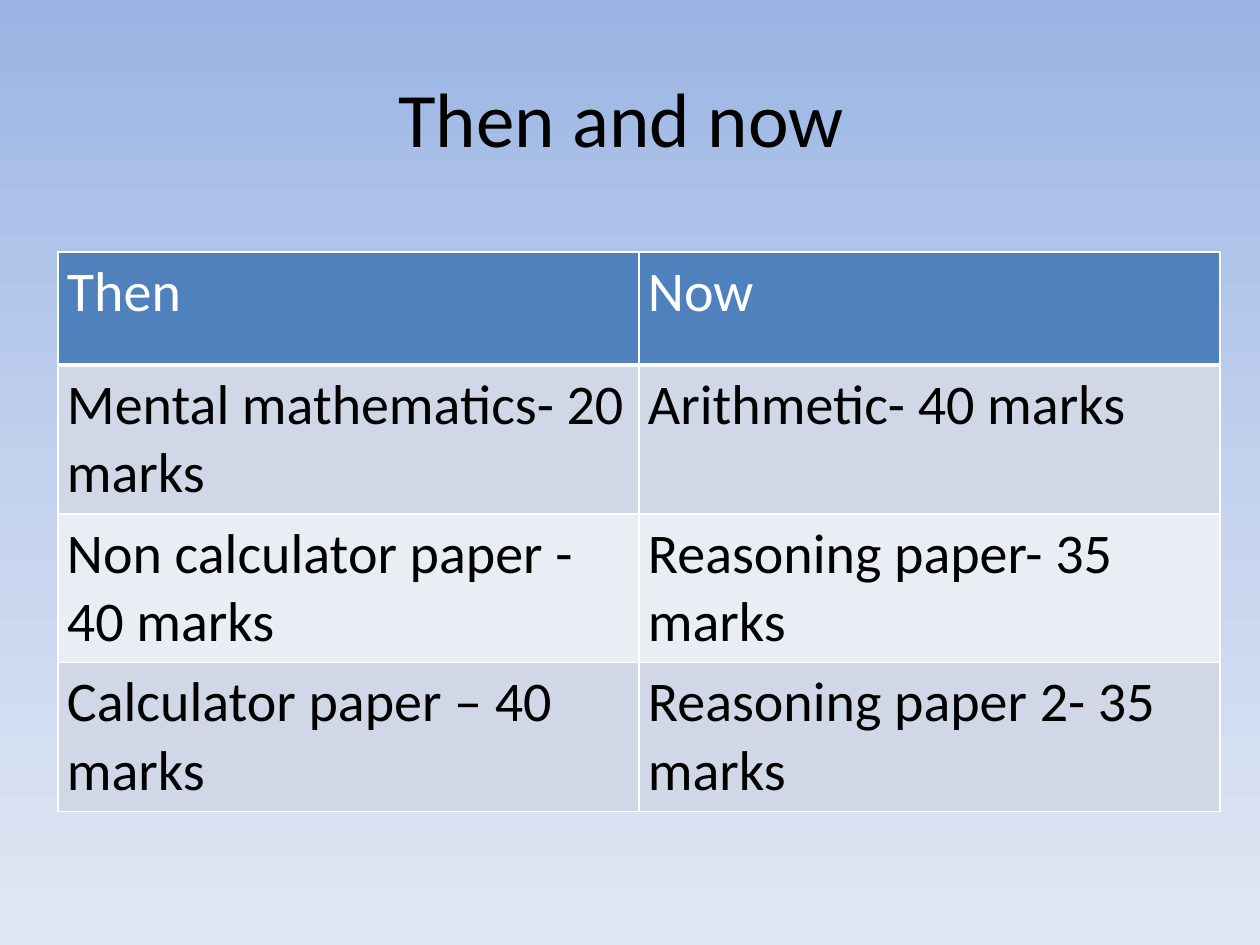
import copy

import pptx
import pptx.dml.color
import pptx.enum.text
import pptx.oxml
import pptx.oxml.ns
import pptx.util

EMU_PER_PX = 914400 / 126
FONT = "Calibri"

BLACK = pptx.dml.color.RGBColor(0x00, 0x00, 0x00)
WHITE = pptx.dml.color.RGBColor(0xFF, 0xFF, 0xFF)
HEADER_BLUE = pptx.dml.color.RGBColor(0x4F, 0x81, 0xBD)
BAND_DARK = pptx.dml.color.RGBColor(0xD0, 0xD8, 0xE8)
BAND_LIGHT = pptx.dml.color.RGBColor(0xE9, 0xED, 0xF4)
SKY_TOP = pptx.dml.color.RGBColor(0x9A, 0xB5, 0xE4)
SKY_MIDDLE = pptx.dml.color.RGBColor(0xC2, 0xD1, 0xED)
SKY_BOTTOM = pptx.dml.color.RGBColor(0xE1, 0xE8, 0xF5)

TABLE_ROWS = [
    ("Then", "Now"),
    ("Mental mathematics- 20 marks", "Arithmetic- 40 marks"),
    ("Non calculator paper - 40 marks", "Reasoning paper- 35 marks"),
    ("Calculator paper – 40 marks", "Reasoning paper 2- 35 marks"),
]


def px(length):
    return pptx.util.Emu(round(length * EMU_PER_PX))


def add_run(paragraph, text, size, color):
    run = paragraph.add_run()
    run.text = text
    run.font.name = FONT
    run.font.size = pptx.util.Pt(size)
    run.font.bold = False
    run.font.color.rgb = color


def set_background(slide):
    fill = slide.background.fill
    fill.gradient()
    fill.gradient_angle = 270
    stop_list = slide.element.find(".//" + pptx.oxml.ns.qn("a:gsLst"))
    stop_list.insert(1, copy.deepcopy(stop_list[0]))
    colors = (SKY_TOP, SKY_MIDDLE, SKY_BOTTOM)
    for stop, position, color in zip(fill.gradient_stops, (0, 0.5, 1), colors):
        stop.position = position
        stop.color.rgb = color


def add_title(slide, text):
    title = slide.shapes.title
    title.left, title.top, title.width, title.height = map(px, (63, 38, 1134, 158))
    title.text_frame.vertical_anchor = pptx.enum.text.MSO_ANCHOR.MIDDLE
    paragraph = title.text_frame.paragraphs[0]
    paragraph.alignment = pptx.enum.text.PP_ALIGN.CENTER
    add_run(paragraph, text, 44, BLACK)


def set_borders(cell, bottom_width):
    """Draw white cell edges; lines must come before the fill in the XML."""
    properties = cell._tc.get_or_add_tcPr()
    widths = {"lnL": 1, "lnR": 1, "lnT": 1, "lnB": bottom_width}
    for index, (edge, width) in enumerate(widths.items()):
        line = pptx.oxml.parse_xml(
            f'<a:{edge} {pptx.oxml.ns.nsdecls("a")} w="{pptx.util.Pt(width)}">'
            f'<a:solidFill><a:srgbClr val="{WHITE}"/></a:solidFill></a:{edge}>'
        )
        properties.insert(index, line)


def format_cell(cell, text, is_header, fill_color):
    cell.margin_left = cell.margin_right = px(9)
    cell.margin_top = cell.margin_bottom = px(6)
    cell.fill.solid()
    cell.fill.fore_color.rgb = fill_color
    set_borders(cell, 3 if is_header else 1)
    text_color = WHITE if is_header else BLACK
    add_run(cell.text_frame.paragraphs[0], text, 32, text_color)


def add_marks_table(slide):
    frame = slide.shapes.add_table(
        len(TABLE_ROWS), 2, px(58), px(252), px(1162), px(452)
    )
    table = frame.table
    for row_index, texts in enumerate(TABLE_ROWS):
        is_header = row_index == 0
        band_color = BAND_DARK if row_index % 2 else BAND_LIGHT
        fill_color = HEADER_BLUE if is_header else band_color
        for column_index, text in enumerate(texts):
            cell = table.cell(row_index, column_index)
            format_cell(cell, text, is_header, fill_color)


def main():
    presentation = pptx.Presentation()
    presentation.slide_width = px(1260)
    presentation.slide_height = px(945)
    slide = presentation.slides.add_slide(presentation.slide_layouts[5])
    set_background(slide)
    add_title(slide, "Then and now ")
    add_marks_table(slide)
    presentation.save("out.pptx")


if __name__ == "__main__":
    main()
